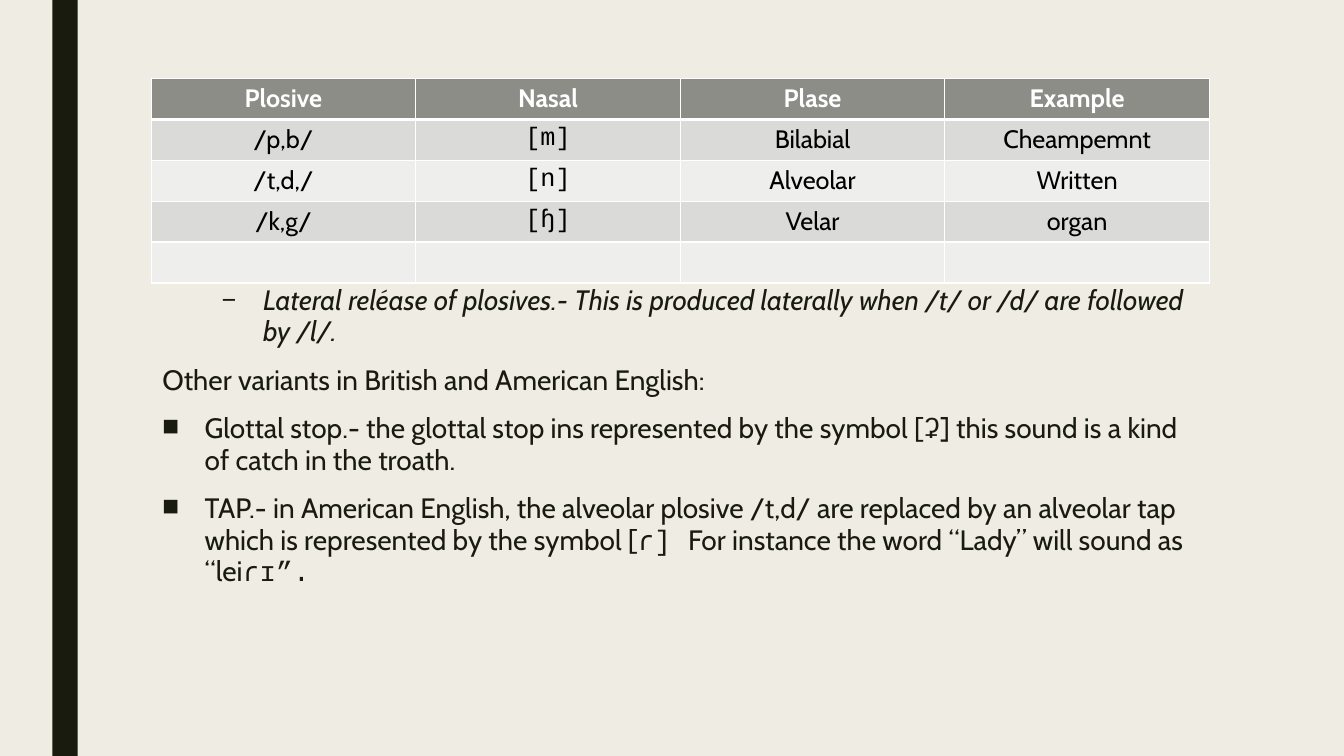
from lxml import etree
from pptx import Presentation
from pptx.dml.color import RGBColor
from pptx.enum.shapes import MSO_SHAPE
from pptx.enum.text import PP_ALIGN
from pptx.oxml.ns import qn
from pptx.util import Cm, Pt

RECTANGLE = MSO_SHAPE.RECTANGLE
CENTER = PP_ALIGN.CENTER
LEFT = PP_ALIGN.LEFT

BODY_FONT = "Cabin"
PHONETIC_FONT = "Courier New"
COLORS = {
    "background": "EFEDE3",
    "ink": "191B0E",
    "header": "8C8D86",
    "odd_row": "DADBD9",
    "even_row": "EEEEED",
    "white": "FFFFFF",
    "black": "000000",
}

TABLE_ROWS = [
    ("Plosive", "Nasal", "Plase", "Example"),
    ("/p,b/", "[m]", "Bilabial", "Cheampemnt"),
    ("/t,d,/", "[n]", "Alveolar", "Written"),
    ("/k,g/", "[ɧ]", "Velar", "organ"),
    ("", "", "", ""),
]
NASAL_COLUMN = 1

NOTES = [
    {
        "runs": [("Lateral reléase of plosives.- This is produced laterally when "
                  "/t/ or /d/ are followed by /l/.", BODY_FONT)],
        "bullet": "–", "indent": 2.54, "before": 5, "italic": True, "level": 1,
    },
    {"runs": [("Other variants in British and American English:", BODY_FONT)]},
    {
        "runs": [
            ("Glottal stop.- the glottal stop ins represented by the symbol [", BODY_FONT),
            ("ʡ", PHONETIC_FONT),
            ("] this sound is a kind of catch in the troath.", BODY_FONT),
        ],
        "bullet": "■", "indent": 1.07,
    },
    {
        "runs": [
            ("TAP.- in American English, the alveolar plosive /t,d/ are replaced by an "
             "alveolar tap which is represented by the symbol [", BODY_FONT),
            ("ɾ] ", PHONETIC_FONT),
            ("For instance the word “Lady” will sound as “lei", BODY_FONT),
            ("ɾɪ”.", PHONETIC_FONT),
        ],
        "bullet": "■", "indent": 1.07,
    },
]
HANGING = 1.07


def add_text(para, text, size=20, font=BODY_FONT, color="ink", bold=False,
             italic=False, align=LEFT):
    para.alignment = align
    span = para.add_run()
    span.text = text
    span.font.size = Pt(size)
    span.font.name = font
    span.font.bold = bold
    span.font.italic = italic
    span.font.color.rgb = RGBColor.from_string(COLORS[color])
    properties = span.font._element
    for tag in ("a:ea", "a:cs"):
        etree.SubElement(properties, qn(tag), typeface=font)


def set_bullet(para, bullet, indent):
    properties = para._p.get_or_add_pPr()
    properties.set("marL", str(Cm(indent)))
    properties.set("indent", str(-Cm(HANGING)))
    etree.SubElement(properties, qn("a:buFont"), typeface=PHONETIC_FONT)
    etree.SubElement(properties, qn("a:buChar"), char=bullet)


def set_borders(cell, widths):
    properties = cell._tc.get_or_add_tcPr()
    for index, (side, width) in enumerate(widths.items()):
        line = etree.Element(qn(f"a:ln{side}"), w=str(Pt(width)))
        fill = etree.SubElement(line, qn("a:solidFill"))
        etree.SubElement(fill, qn("a:srgbClr"), val=COLORS["white"])
        properties.insert(index, line)


def add_stripe(page):
    stripe = page.shapes.add_shape(RECTANGLE, Cm(1.32), 0, Cm(0.64), Cm(19.05))
    stripe.shadow.inherit = False
    stripe.fill.solid()
    stripe.fill.fore_color.rgb = RGBColor.from_string(COLORS["ink"])
    stripe.line.fill.background()


def add_plosive_table(page):
    table = page.shapes.add_table(
        len(TABLE_ROWS), len(TABLE_ROWS[0]), Cm(3.81), Cm(1.98), Cm(26.67), Cm(5.15)
    ).table
    for row_index, row in enumerate(TABLE_ROWS):
        is_header = row_index == 0
        row_fill = "header" if is_header else ("even_row", "odd_row")[row_index % 2]
        widths = {"L": 1, "R": 1, "T": 3 if row_index == 1 else 1, "B": 3 if is_header else 1}
        for column_index, text in enumerate(row):
            cell = table.cell(row_index, column_index)
            cell.fill.solid()
            cell.fill.fore_color.rgb = RGBColor.from_string(COLORS[row_fill])
            set_borders(cell, widths)
            is_phonetic = column_index == NASAL_COLUMN and not is_header
            if text:
                add_text(cell.text_frame.paragraphs[0], text, size=18, align=CENTER,
                         font=PHONETIC_FONT if is_phonetic else BODY_FONT,
                         color="white" if is_header else "black", bold=is_header)


def add_notes(page):
    box = page.shapes.add_textbox(Cm(3.84), Cm(7.06), Cm(26.67), Cm(8.38))
    frame = box.text_frame
    frame.word_wrap = True
    for index, note in enumerate(NOTES):
        para = frame.add_paragraph() if index else frame.paragraphs[0]
        para.level = note.get("level", 0)
        para.line_spacing = 0.94
        para.space_before = Pt(note.get("before", 10))
        para.space_after = Pt(2)
        if "bullet" in note:
            set_bullet(para, note["bullet"], note["indent"])
        for text, font in note["runs"]:
            add_text(para, text, font=font, italic=note.get("italic", False))


def main():
    deck = Presentation()
    deck.slide_width = Cm(33.87)
    deck.slide_height = Cm(19.05)
    page = deck.slides.add_slide(deck.slide_layouts[6])
    page.background.fill.solid()
    page.background.fill.fore_color.rgb = RGBColor.from_string(COLORS["background"])
    add_stripe(page)
    add_plosive_table(page)
    add_notes(page)
    deck.save("out.pptx")


if __name__ == "__main__":
    main()
